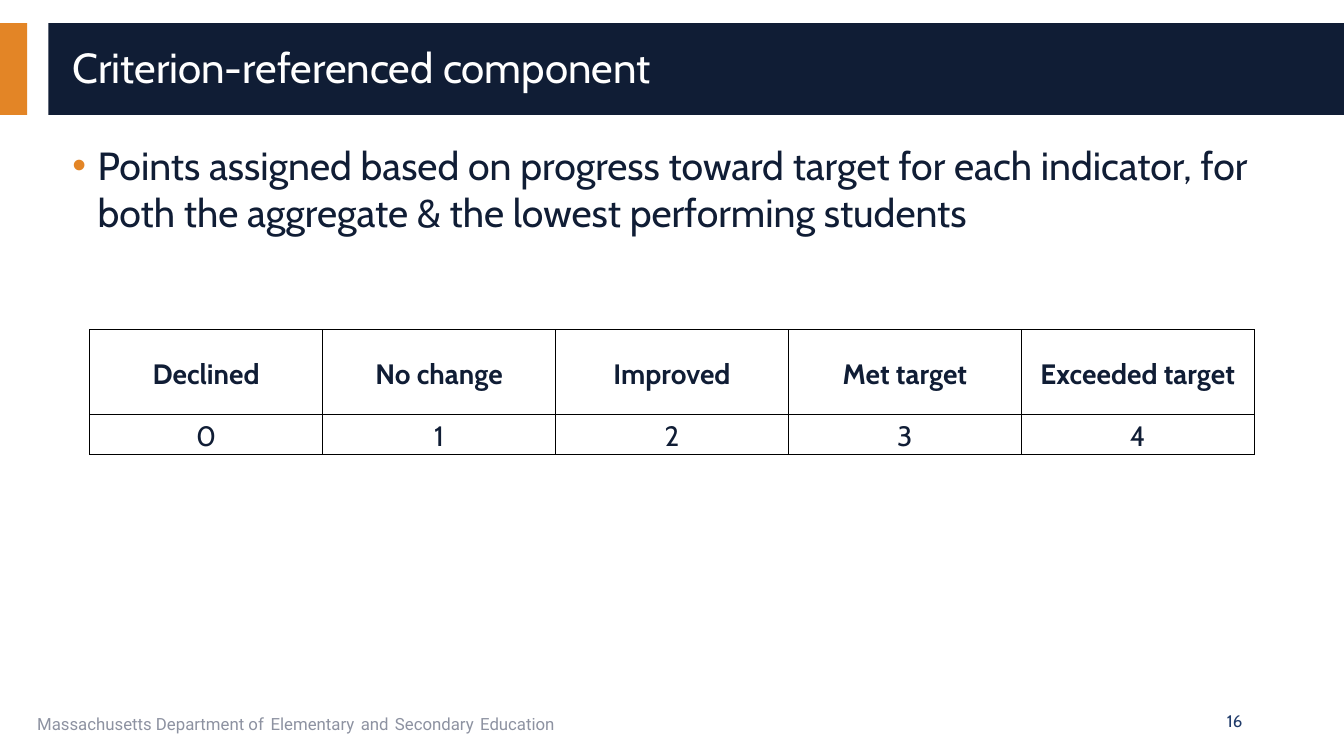
from lxml.etree import SubElement
from pptx import Presentation
from pptx.dml.color import RGBColor
from pptx.enum.shapes import MSO_SHAPE
from pptx.enum.text import MSO_ANCHOR, MSO_AUTO_SIZE, PP_ALIGN
from pptx.oxml import parse_xml
from pptx.oxml.ns import nsdecls, qn
from pptx.util import Pt

EMU_PER_PX = 9144  # 100 px to the inch
NAVY, ORANGE, WHITE, BLACK = "101D35", "E38526", "FFFFFF", "000000"
BLUE, GREY = "203B6A", "8D92A1"

SCORES = [
    ("Declined", "No change", "Improved", "Met target", "Exceeded target"),
    ("0", "1", "2", "3", "4"),
]
COLUMN_WIDTH, ROW_HEIGHTS = 231, (84, 40)
FOOTER_PARTS = ("Massachusetts Department of", "Elementary", "and",
                "Secondary", "Education")


def px(length):
    return length * EMU_PER_PX


def box(*lengths):
    return [px(length) for length in lengths]


def rgb(value):
    return RGBColor.from_string(value)


def style(font, size, color, name="Cabin", bold=False):
    font.size, font.name, font.bold = Pt(size), name, bold
    font.color.rgb = rgb(color)


def add_bar(slide, left, top, width, height, color):
    bar = slide.shapes.add_shape(MSO_SHAPE.RECTANGLE, *box(left, top, width, height))
    bar.shadow.inherit = False
    bar.fill.solid()
    bar.fill.fore_color.rgb = rgb(color)
    bar.line.fill.background()


def add_text(slide, left, top, width, height, anchor=MSO_ANCHOR.TOP):
    frame = slide.shapes.add_textbox(*box(left, top, width, height)).text_frame
    frame.word_wrap = True
    frame.vertical_anchor = anchor
    return frame.paragraphs[0]


def set_title(slide, text):
    title = slide.shapes.title
    title.left, title.top, title.width, title.height = box(62, 32, 1244, 74)
    slide.shapes._spTree.append(title._element)  # in front of the banner
    frame = title.text_frame
    frame.text = text
    frame.auto_size = MSO_AUTO_SIZE.NONE
    frame.vertical_anchor = MSO_ANCHOR.MIDDLE
    heading = frame.paragraphs[0]
    heading.alignment, heading.line_spacing = PP_ALIGN.LEFT, 0.9
    style(heading.runs[0].font, 30, WHITE)


def add_bullet(slide, text):
    point = add_text(slide, 62, 135, 1244, 552)
    point.text = text
    properties = point._p.get_or_add_pPr()
    properties.set("marL", str(px(25)))
    properties.set("indent", str(px(-25)))
    bullet_color = SubElement(properties, qn("a:buClr"))
    SubElement(bullet_color, qn("a:srgbClr")).set("val", ORANGE)
    SubElement(properties, qn("a:buFont")).set("typeface", "Arial")
    SubElement(properties, qn("a:buChar")).set("char", "•")
    style(point.runs[0].font, 28, NAVY)


def add_borders(cell):
    properties = cell._tc.get_or_add_tcPr()
    for position, side in enumerate(("lnL", "lnR", "lnT", "lnB")):
        properties.insert(position, parse_xml(
            f'<a:{side} {nsdecls("a")} w="{Pt(1)}"><a:solidFill>'
            f'<a:srgbClr val="{BLACK}"/></a:solidFill></a:{side}>'))


def fill_cell(cell, text, bold):
    cell.text = text
    cell.fill.background()
    cell.vertical_anchor = MSO_ANCHOR.MIDDLE
    cell.margin_left = cell.margin_right = px(7)
    cell.margin_top = cell.margin_bottom = 0
    label = cell.text_frame.paragraphs[0]
    label.alignment, label.line_spacing = PP_ALIGN.CENTER, 1.15
    style(label.runs[0].font, 20, NAVY, bold=bold)
    add_borders(cell)


def add_score_table(slide):
    columns = len(SCORES[0])
    table = slide.shapes.add_table(
        len(SCORES), columns,
        *box(89, 327, columns * COLUMN_WIDTH, sum(ROW_HEIGHTS))).table
    table.horz_banding = False
    for column in table.columns:
        column.width = px(COLUMN_WIDTH)
    for row, (height, texts) in enumerate(zip(ROW_HEIGHTS, SCORES)):
        table.rows[row].height = px(height)
        for column, text in enumerate(texts):
            fill_cell(table.cell(row, column), text, bold=row == 0)


def add_footer(slide):
    department = add_text(slide, 27, 695, 844, 40)
    for index, part in enumerate(FOOTER_PARTS):
        if index:
            gap = department.add_run()
            gap.text = " "
            style(gap.font, 18, BLUE, "Roboto")
        words = department.add_run()
        words.text = part
        style(words.font, 12, GREY, "Roboto")

    page_number = add_text(slide, 942, 695, 300, 40, MSO_ANCHOR.MIDDLE)
    page_number.text = "16"
    page_number.alignment = PP_ALIGN.RIGHT
    style(page_number.runs[0].font, 12, BLUE)


def main():
    presentation = Presentation()
    presentation.slide_width, presentation.slide_height = box(1333, 750)
    slide = presentation.slides.add_slide(presentation.slide_layouts[5])

    # Banner and title
    add_bar(slide, 0, 23, 27, 91, ORANGE)
    add_bar(slide, 48, 23, 1285, 91, NAVY)
    set_title(slide, "Criterion-referenced component")

    # Content
    add_bullet(slide, "Points assigned based on progress toward target for each "
                      "indicator, for both the aggregate & the lowest performing "
                      "students")
    add_score_table(slide)

    # Footer
    add_footer(slide)
    presentation.save("out.pptx")


if __name__ == "__main__":
    main()
